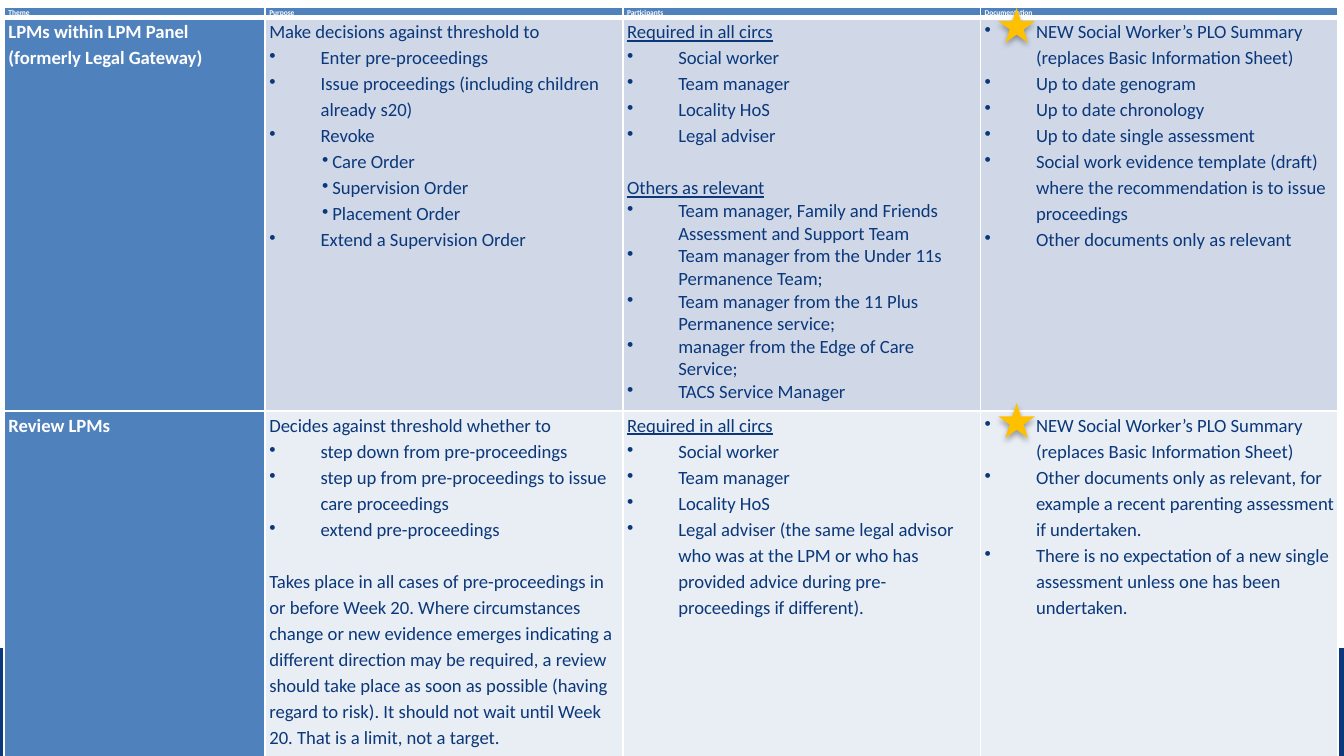
from pptx import Presentation
from pptx.dml.color import RGBColor
from pptx.enum.shapes import MSO_SHAPE
from pptx.oxml.ns import qn
from pptx.util import Cm, Pt
from lxml import etree

RECTANGLE = MSO_SHAPE.RECTANGLE
STAR = MSO_SHAPE.STAR_5_POINT
BLANK_LAYOUT = 6

COLOURS = {
    "navy": "0A387A",
    "blue": "4F81BD",
    "upper": "D0D8E8",
    "lower": "E9EDF4",
    "gold": "FFC000",
    "white": "FFFFFF",
    "black": "000000",
}
FONT = "Calibri"
LOOSE = 1.15
BLANK_LINE = 14

INDENTS = {"bullet": (0.97, -0.97), "tight": (0.97, -0.97), "inner": (1.19, -0.19)}

COLUMN_WIDTHS = [4.93, 6.76, 6.76, 6.76]
ROW_HEIGHTS = [0.2, 7.44, 6.53]
ROW_FILLS = ["blue", "upper", "lower"]


def bullets(*texts, kind="bullet"):
    return [(kind, text) for text in texts]


REQUIRED = [("underlined", "Required in all circs")] + bullets(
    "Social worker", "Team manager", "Locality HoS")
SUMMARY = bullets("NEW Social Worker’s PLO Summary (replaces Basic Information Sheet)")

ROWS = [
    [[("plain", name)] for name in ("Theme", "Purpose", "Participants", "Documentation")],
    [
        [("plain", "LPMs within LPM Panel (formerly Legal Gateway)")],
        [("plain", "Make decisions against threshold to")]
        + bullets("Enter pre-proceedings",
                  "Issue proceedings (including children already s20)",
                  "Revoke")
        + bullets("Care Order", "Supervision Order", "Placement Order", kind="inner")
        + bullets("Extend a Supervision Order"),
        REQUIRED
        + bullets("Legal adviser")
        + [("spaced underlined", "Others as relevant")]
        + bullets("Team manager, Family and Friends Assessment and Support Team",
                  "Team manager from the Under 11s Permanence Team;",
                  "Team manager from the 11 Plus Permanence service;",
                  "manager from the Edge of Care Service;",
                  "TACS Service Manager", kind="tight"),
        SUMMARY
        + bullets("Up to date genogram",
                  "Up to date chronology",
                  "Up to date single assessment",
                  "Social work evidence template (draft) where the recommendation "
                  "is to issue proceedings",
                  "Other documents only as relevant"),
    ],
    [
        [("plain", "Review LPMs")],
        [("plain", "Decides against threshold whether to")]
        + bullets("step down from pre-proceedings",
                  "step up from pre-proceedings to issue care proceedings",
                  "extend pre-proceedings")
        + [("spaced", "Takes place in all cases of pre-proceedings in or before Week 20. "
            "Where circumstances change or new evidence emerges indicating a different "
            "direction may be required, a review should take place as soon as possible "
            "(having regard to risk). It should not wait until Week 20. "
            "That is a limit, not a target.")],
        REQUIRED
        + bullets("Legal adviser (the same legal advisor who was at the LPM or who has "
                  "provided advice during pre-proceedings if different)."),
        SUMMARY
        + bullets("Other documents only as relevant, for example a recent parenting "
                  "assessment if undertaken.",
                  "There is no expectation of a new single assessment unless one has "
                  "been undertaken."),
    ],
]


def colour(name):
    return RGBColor.from_string(COLOURS[name])


class SlideBuilder:
    def __init__(self, slide):
        self.slide = slide

    def shape(self, preset, left, top, width, height, fill):
        shape = self.slide.shapes.add_shape(
            preset, Cm(left), Cm(top), Cm(width), Cm(height))
        shape.shadow.inherit = False
        shape.fill.solid()
        shape.fill.fore_color.rgb = colour(fill)
        shape.line.fill.background()
        return shape

    def star(self, left, top):
        star = self.shape(STAR, left, top, 0.69, 0.66, "gold")
        effects = star._element.spPr.find(qn("a:effectLst"))
        shadow = etree.SubElement(
            effects, qn("a:outerShdw"), blurRad=str(Pt(3.1)), dist=str(Pt(1.8)),
            dir="5400000", rotWithShape="0")
        shade = etree.SubElement(shadow, qn("a:srgbClr"), val=COLOURS["black"])
        etree.SubElement(shade, qn("a:alpha"), val="35000")

    def table(self, left, top, widths, heights, rows):
        frame = self.slide.shapes.add_table(
            len(heights), len(widths), Cm(left), Cm(top),
            Cm(sum(widths)), Cm(sum(heights)))
        table = frame.table
        table.first_col = True
        for column, width in zip(table.columns, widths):
            column.width = Cm(width)
        for row_index, (row, height) in enumerate(zip(table.rows, heights)):
            row.height = Cm(height)
            for column_index, content in enumerate(rows[row_index]):
                heading = row_index == 0 or column_index == 0
                cell = row.cells[column_index]
                self.borders(cell, row_index)
                cell.fill.solid()
                cell.fill.fore_color.rgb = colour("blue" if heading else ROW_FILLS[row_index])
                self.cell_text(cell, content, 4 if row_index == 0 else 10, heading)

    def borders(self, cell, row_index):
        widths = {"L": 1, "R": 1, "T": 3 if row_index == 1 else 1,
                  "B": 3 if row_index == 0 else 1}
        properties = cell._tc.get_or_add_tcPr()
        for side, width in widths.items():
            line = etree.SubElement(properties, qn(f"a:ln{side}"), w=str(Pt(width)))
            fill = etree.SubElement(line, qn("a:solidFill"))
            etree.SubElement(fill, qn("a:srgbClr"), val=COLOURS["white"])

    def cell_text(self, cell, content, size, heading):
        cell.margin_left = cell.margin_right = Cm(0.08)
        cell.margin_top = cell.margin_bottom = 0
        frame = cell.text_frame
        for index, (kind, text) in enumerate(content):
            paragraph = frame.add_paragraph() if index else frame.paragraphs[0]
            paragraph.text = text
            paragraph.line_spacing = 1.0 if kind == "tight" else LOOSE
            if "spaced" in kind:
                paragraph.space_before = Pt(BLANK_LINE)
            if kind in INDENTS:
                self.bullet(paragraph, *INDENTS[kind])
            for run in paragraph.runs:
                run.font.name = FONT
                run.font.size = Pt(size)
                run.font.bold = heading
                run.font.underline = "underlined" in kind
                run.font.color.rgb = colour("white" if heading else "navy")

    def bullet(self, paragraph, margin, indent):
        properties = paragraph._p.get_or_add_pPr()
        properties.set("marL", str(Cm(margin)))
        properties.set("indent", str(Cm(indent)))
        etree.SubElement(properties, qn("a:buChar"), char="•")


def main():
    presentation = Presentation()
    presentation.slide_width = Cm(25.4)
    presentation.slide_height = Cm(14.29)
    layout = presentation.slide_layouts[BLANK_LAYOUT]
    builder = SlideBuilder(presentation.slides.add_slide(layout))
    builder.shape(RECTANGLE, 0, 12.25, 25.4, 2.04, "navy")
    builder.table(0.08, 0.13, COLUMN_WIDTHS, ROW_HEIGHTS, ROWS)
    for top in (0.15, 7.62):
        builder.star(18.87, top)
    presentation.save("out.pptx")


if __name__ == "__main__":
    main()
